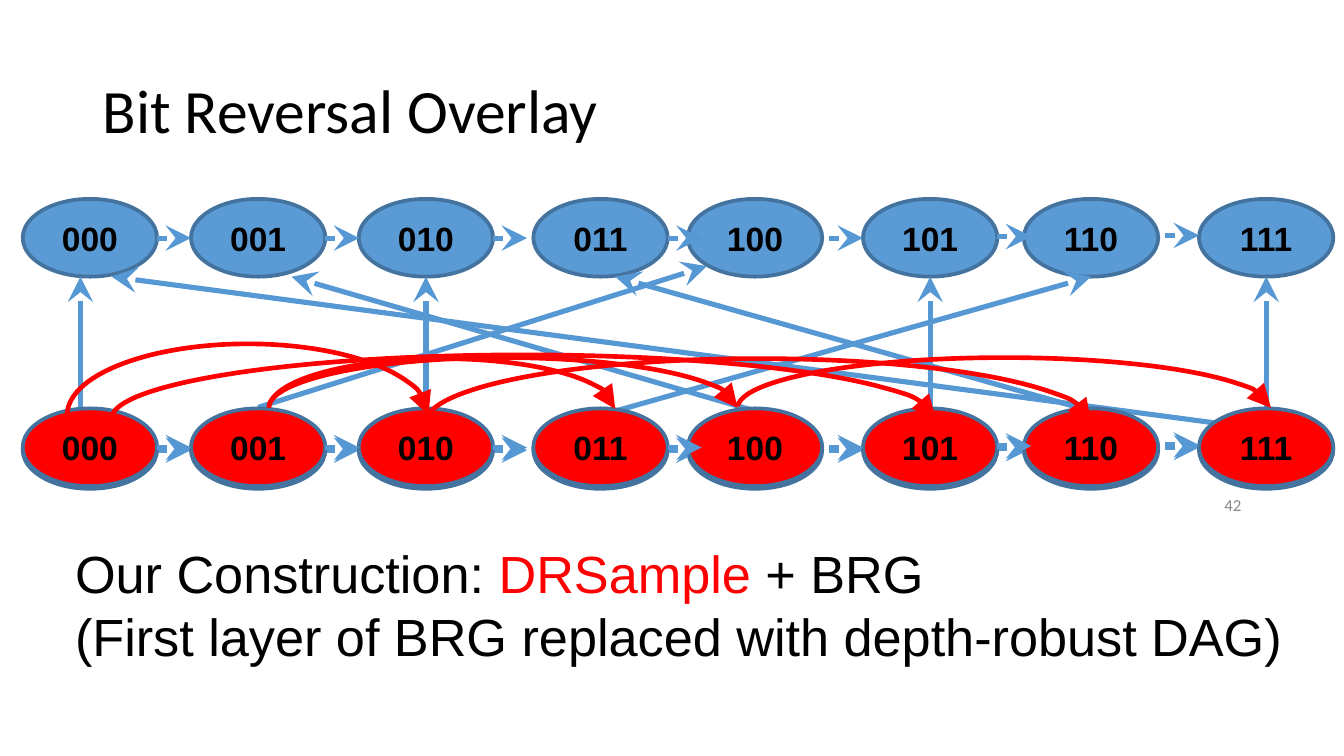
"""Build the bit reversal overlay slide."""
from dataclasses import dataclass

from lxml import etree
from pptx import Presentation
from pptx.dml.color import RGBColor
from pptx.enum.shapes import MSO_CONNECTOR, MSO_SHAPE
from pptx.enum.text import MSO_ANCHOR, MSO_AUTO_SIZE, PP_ALIGN
from pptx.oxml.ns import qn
from pptx.util import Cm, Pt

STRAIGHT = MSO_CONNECTOR.STRAIGHT
ELLIPSE, ARC = MSO_SHAPE.OVAL, MSO_SHAPE.ARC
MIDDLE, TOP = MSO_ANCHOR.MIDDLE, MSO_ANCHOR.TOP
LEFT, CENTER, RIGHT = PP_ALIGN.LEFT, PP_ALIGN.CENTER, PP_ALIGN.RIGHT
NO_AUTOFIT = MSO_AUTO_SIZE.NONE

NODE_WIDTH, NODE_HEIGHT = 2.54, 1.47
NODE_LEFTS = (0.43, 3.61, 6.78, 10.08, 13, 16.31, 19.35, 22.66)
STEP_LENGTH = 0.64
STEPS = ((2.97, 0.74), (6.15, 0.74), (9.32, 0.74), (12.62, 0.74),
         (15.67, 0.74), (18.85, 0.71), (22.02, 0.69))
UPPER_ROW, LOWER_ROW, OVERLAY_ROW = 3.76, 7.77, 7.72
REVERSAL_EDGES = (
    (1.52, 7.7, 1.52, 5.23),
    (4.88, 7.7, 13.36, 5.03),
    (8.05, 7.77, 8.05, 5.23),
    (14.27, 7.77, 5.51, 5.23),
    (11.63, 7.77, 20.62, 5.23),
    (17.58, 7.77, 17.58, 5.23),
    (20.62, 7.77, 11.63, 5.23),
    (23.93, 7.77, 23.93, 5.23),
    (23.01, 8, 2.11, 5.23),
)
SAMPLE_EDGES = (
    (5.08, 6.76, 8.86, 1.9),
    (13.94, 6.76, 10.08, 1.9),
    (5.08, 6.78, 6.55, 1.9),
    (1.27, 6.5, 6.83, 2.69),
    (8.05, 6.78, 12.57, 2.41),
    (2.11, 6.71, 15.57, 2.41),
)


@dataclass(frozen=True)
class Theme:
    """Colours, fonts, type sizes and line widths of the slide."""
    text: str = "000000"
    muted: str = "888888"
    node: str = "5B9BD5"
    outline: str = "43739E"
    edge: str = "5698D3"
    accent: str = "FF0000"
    heading_font: str = "Calibri"
    body_font: str = "Arial"
    title_size: float = 33
    body_size: float = 28
    node_size: float = 18
    number_size: float = 9
    outline_width: float = 2
    edge_width: float = 2.75
    arc_width: float = 2.5


def write_text(paragraph, text, *, font, size, color, bold=False, align=LEFT):
    """Append a formatted run to a paragraph."""
    paragraph.alignment = align
    run = paragraph.add_run()
    run.text = text
    run.font.name = font
    run.font.size = Pt(size)
    run.font.bold = bold
    run.font.color.rgb = RGBColor.from_string(color)


class SlideBuilder:
    """Hold the theme and the slide being drawn."""

    def __init__(self, slide, theme):
        """Keep the slide and its theme."""
        self.slide = slide
        self.theme = theme

    def title(self, text, *box):
        """Place and fill the title placeholder."""
        shape = self.slide.shapes.title
        shape.left, shape.top, shape.width, shape.height = map(Cm, box)
        frame = shape.text_frame
        frame.auto_size = NO_AUTOFIT
        frame.vertical_anchor = MIDDLE
        frame.margin_left = frame.margin_right = Cm(0.19)
        frame.margin_top = frame.margin_bottom = Cm(0.19)
        paragraph = frame.paragraphs[0]
        paragraph.line_spacing = 0.9
        write_text(paragraph, text, font=self.theme.heading_font,
                   size=self.theme.title_size, color=self.theme.text)

    def text_box(self, lines, *box, font, size, align=LEFT, anchor=TOP, wrap=False):
        """Add a text box from lines of (text, colour) runs."""
        frame = self.slide.shapes.add_textbox(*map(Cm, box)).text_frame
        frame.word_wrap = wrap
        frame.vertical_anchor = anchor
        for index, runs in enumerate(lines):
            paragraph = frame.add_paragraph() if index else frame.paragraphs[0]
            for text, color in runs:
                write_text(paragraph, text, font=font, size=size,
                           color=color, align=align)
        return frame

    def style_line(self, shape, color, width, arrowhead=None):
        """Set a line's colour, width and end arrowhead."""
        shape.line.color.rgb = RGBColor.from_string(color)
        shape.line.width = Pt(width)
        if arrowhead:
            line = shape.element.spPr.find(qn("a:ln"))
            etree.SubElement(line, qn("a:tailEnd"),
                             type=arrowhead, w="lg", len="lg")

    def node(self, label, left, top, color):
        """Add a labelled ellipse."""
        shape = self.slide.shapes.add_shape(
            ELLIPSE, Cm(left), Cm(top), Cm(NODE_WIDTH), Cm(NODE_HEIGHT))
        shape.shadow.inherit = False
        shape.fill.solid()
        shape.fill.fore_color.rgb = RGBColor.from_string(color)
        self.style_line(shape, self.theme.outline, self.theme.outline_width)
        shape.text_frame.vertical_anchor = MIDDLE
        write_text(shape.text_frame.paragraphs[0], label,
                   font=self.theme.body_font, size=self.theme.node_size,
                   color=self.theme.text, bold=True, align=CENTER)

    def arrow(self, *ends):
        """Add a straight arrow between two points."""
        connector = self.slide.shapes.add_connector(STRAIGHT, *map(Cm, ends))
        self.style_line(connector, self.theme.edge, self.theme.edge_width, "stealth")
        etree.SubElement(connector.element.spPr, qn("a:effectLst"))

    def arc(self, *box):
        """Add an arched arrow over the upper half of a box."""
        shape = self.slide.shapes.add_shape(ARC, *map(Cm, box))
        shape.shadow.inherit = False
        shape.adjustments[0] = 108.23
        shape.adjustments[1] = 0
        shape.fill.background()
        self.style_line(shape, self.theme.accent, self.theme.arc_width, "triangle")

    def row(self, top, color):
        """Add a chain of nodes numbered in binary."""
        for index, left in enumerate(NODE_LEFTS):
            self.node(f"{index:03b}", left, top, color)
        for start, drop in STEPS:
            self.arrow(start, top + drop, start + STEP_LENGTH, top + drop)


def main():
    """Draw the slide and save it."""
    theme = Theme()
    presentation = Presentation()
    presentation.slide_width, presentation.slide_height = Cm(25.4), Cm(14.29)
    slide = presentation.slides.add_slide(presentation.slide_layouts[5])
    builder = SlideBuilder(slide, theme)

    builder.title("Bit Reversal Overlay", 1.75, 0.76, 21.9, 2.77)
    number = builder.text_box([[("42", theme.muted)]], 17.93, 9.17, 5.72, 0.76,
                              font=theme.heading_font, size=theme.number_size,
                              align=RIGHT, anchor=MIDDLE, wrap=True)
    number.margin_left = number.margin_right = Cm(0.19)
    number.margin_top = number.margin_bottom = Cm(0.1)

    builder.row(UPPER_ROW, theme.node)
    builder.row(LOWER_ROW, theme.node)
    for edge in REVERSAL_EDGES:
        builder.arrow(*edge)
    builder.row(OVERLAY_ROW, theme.accent)
    for edge in SAMPLE_EDGES:
        builder.arc(*edge)

    builder.text_box(
        [[("Our Construction: ", theme.text), ("DRSample", theme.accent),
          (" + BRG", theme.text)],
         [("(First layer of BRG replaced with depth-robust DAG)", theme.text)]],
        1.17, 10.11, 23.6, 3.84, font=theme.body_font, size=theme.body_size)
    presentation.save("out.pptx")


if __name__ == "__main__":
    main()
